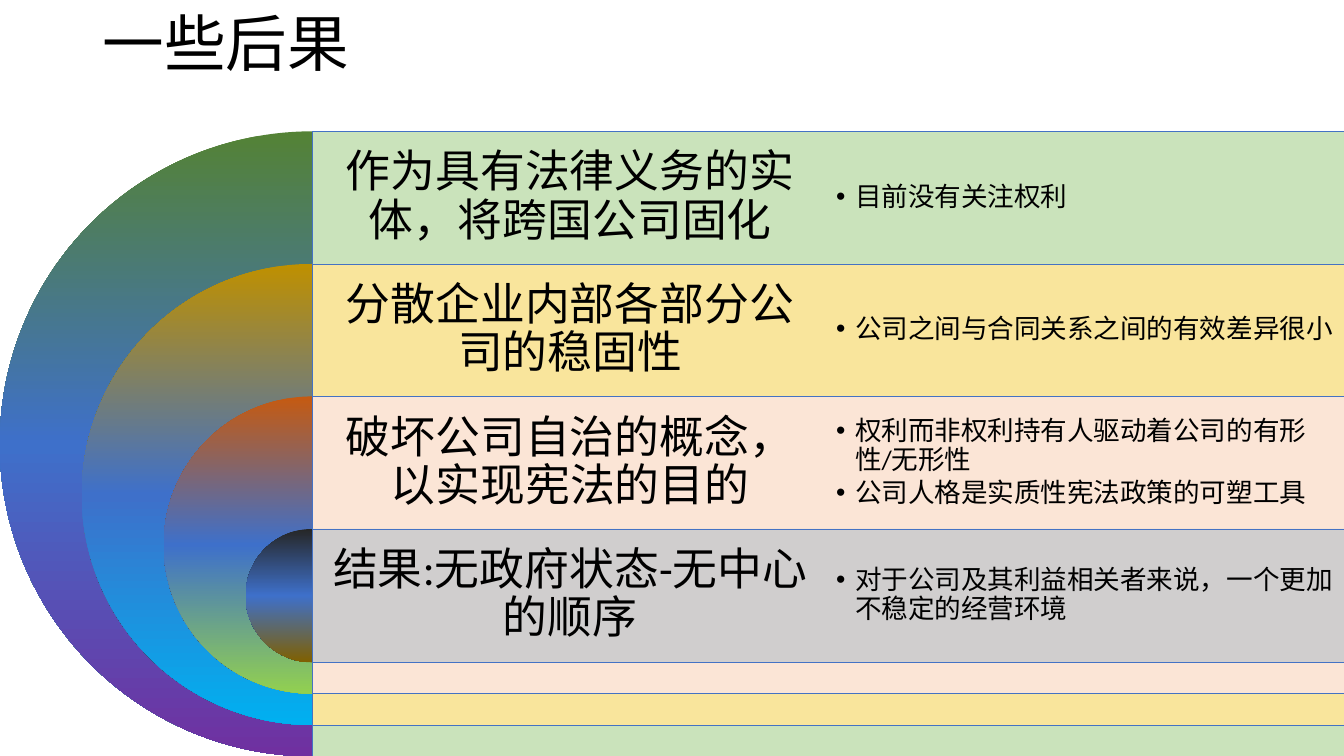
from copy import deepcopy

from lxml.etree import SubElement
from pptx import Presentation
from pptx.dml.color import RGBColor
from pptx.enum.shapes import MSO_SHAPE
from pptx.enum.text import MSO_ANCHOR, PP_ALIGN
from pptx.oxml.ns import qn
from pptx.util import Cm, Pt

CENTER_X, RIGHT = 7.87, 33.87
TOP, STEP = 3.31, 3.34
DIAMETER, SHRINK = 15.75, 4.13
HALF = (RIGHT - CENTER_X) / 2
MIDDLE = "3E70CA"
TITLE = {"size": 44, "align": PP_ALIGN.LEFT, "after": 0}
HEADING = {"size": 32, "align": PP_ALIGN.CENTER, "after": 11, "inset": 0.33}
DETAIL = {"size": 19, "align": PP_ALIGN.LEFT, "after": 3, "inset": 0.2, "bullet": True}
LAYERS = [
    ("548235", "7030A0", "C5E0B4", 90, "作为具有法律义务的实体，将跨国公司固化",
     ["目前没有关注权利"]),
    ("BF9000", "00B0F0", "FFE699", 90, "分散企业内部各部分公司的稳固性",
     ["公司之间与合同关系之间的有效差异很小"]),
    ("C55A11", "92D050", "FBE5D6", 100, "破坏公司自治的概念，以实现宪法的目的",
     ["权利而非权利持有人驱动着公司的有形性/无形性",
      "公司人格是实质性宪法政策的可塑工具"]),
    ("262626", "806000", "D0CECE", 100, "结果:无政府状态-无中心的顺序",
     ["对于公司及其利益相关者来说，一个更加不稳定的经营环境"]),
]


def rgb(color):
    """Turn a hex string into a colour."""
    return RGBColor.from_string(color)


def set_attrs(obj, values):
    """Set every attribute named in a dict."""
    for name, value in values.items():
        setattr(obj, name, value)


def add_bullet(p):
    """Give a paragraph a hanging round bullet."""
    pPr = p._p.get_or_add_pPr()
    pPr.set("marL", str(Cm(0.48)))
    pPr.set("indent", str(-Cm(0.48)))
    SubElement(pPr, qn("a:buFont")).set("typeface", "Arial")
    SubElement(pPr, qn("a:buChar")).set("char", "•")


def write(tf, texts, style):
    """Fill a text frame with styled paragraphs."""
    set_attrs(tf, {"word_wrap": True, "vertical_anchor": MSO_ANCHOR.MIDDLE})
    if "inset" in style:
        sides = ("left", "top", "right", "bottom")
        set_attrs(tf, {f"margin_{side}": Cm(style["inset"]) for side in sides})
    for i, text in enumerate(texts):
        p = tf.add_paragraph() if i else tf.paragraphs[0]
        set_attrs(p, {"alignment": style["align"], "line_spacing": 0.9,
                      "space_before": Pt(0), "space_after": Pt(style["after"])})
        if style.get("bullet"):
            p.level = 1
            add_bullet(p)
        r = p.add_run()
        r.text = text
        set_attrs(r.font, {"name": "Calibri", "size": Pt(style["size"])})
        r.font.color.rgb = rgb("000000")


def add_text(slide, x, y, texts, style):
    """Add a text box one band high and half a band wide."""
    box = slide.shapes.add_textbox(Cm(x), Cm(y), Cm(HALF), Cm(STEP))
    write(box.text_frame, texts, style)


def add_half_disc(slide, y, diameter, colors):
    """Add a left half disc with a top-to-bottom gradient."""
    sp = slide.shapes.add_shape(MSO_SHAPE.PIE, Cm(CENTER_X - diameter / 2), Cm(y),
                                Cm(diameter), Cm(diameter))
    sp.adjustments[0], sp.adjustments[1] = 54, 162
    sp.shadow.inherit = False
    sp.line.fill.background()
    sp.fill.gradient()
    sp.fill.gradient_angle = 270
    stops = sp._element.spPr.find(".//" + qn("a:gsLst"))
    stops.insert(1, deepcopy(stops[0]))
    for i, stop in enumerate(sp.fill.gradient_stops):
        stop.position = i / 2
        stop.color.rgb = rgb(colors[i])


def add_band(slide, y, height, color, opacity):
    """Add a bordered band reaching the right slide edge."""
    sp = slide.shapes.add_shape(MSO_SHAPE.RECTANGLE, Cm(CENTER_X), Cm(y),
                                Cm(RIGHT - CENTER_X), Cm(height))
    sp.shadow.inherit = False
    sp.fill.solid()
    sp.fill.fore_color.rgb = rgb(color)
    sp.line.color.rgb = rgb("4472C4")
    sp.line.width = Pt(0.5)
    if opacity < 100:
        fill = sp._element.spPr.find(qn("a:solidFill"))
        SubElement(fill[0], qn("a:alpha")).set("val", str(opacity * 1000))


def main():
    """Build the slide and save it."""
    prs = Presentation()
    set_attrs(prs, {"slide_width": Cm(RIGHT), "slide_height": Cm(19.05)})
    slide = prs.slides.add_slide(prs.slide_layouts[5])
    title = slide.shapes.title
    set_attrs(title, {"left": Cm(2.33), "top": Cm(0),
                      "width": Cm(29.21), "height": Cm(2.33)})
    write(title.text_frame, ["一些后果"], TITLE)
    for i, (first, last, color, opacity, heading, details) in enumerate(LAYERS):
        y = TOP + i * STEP
        diameter = DIAMETER - i * SHRINK
        add_half_disc(slide, y, diameter, (first, MIDDLE, last))
        add_band(slide, y, diameter, color, opacity)
        add_text(slide, CENTER_X, y, [heading], HEADING)
        add_text(slide, CENTER_X + HALF, y, details, DETAIL)
    prs.save("out.pptx")


if __name__ == "__main__":
    main()
